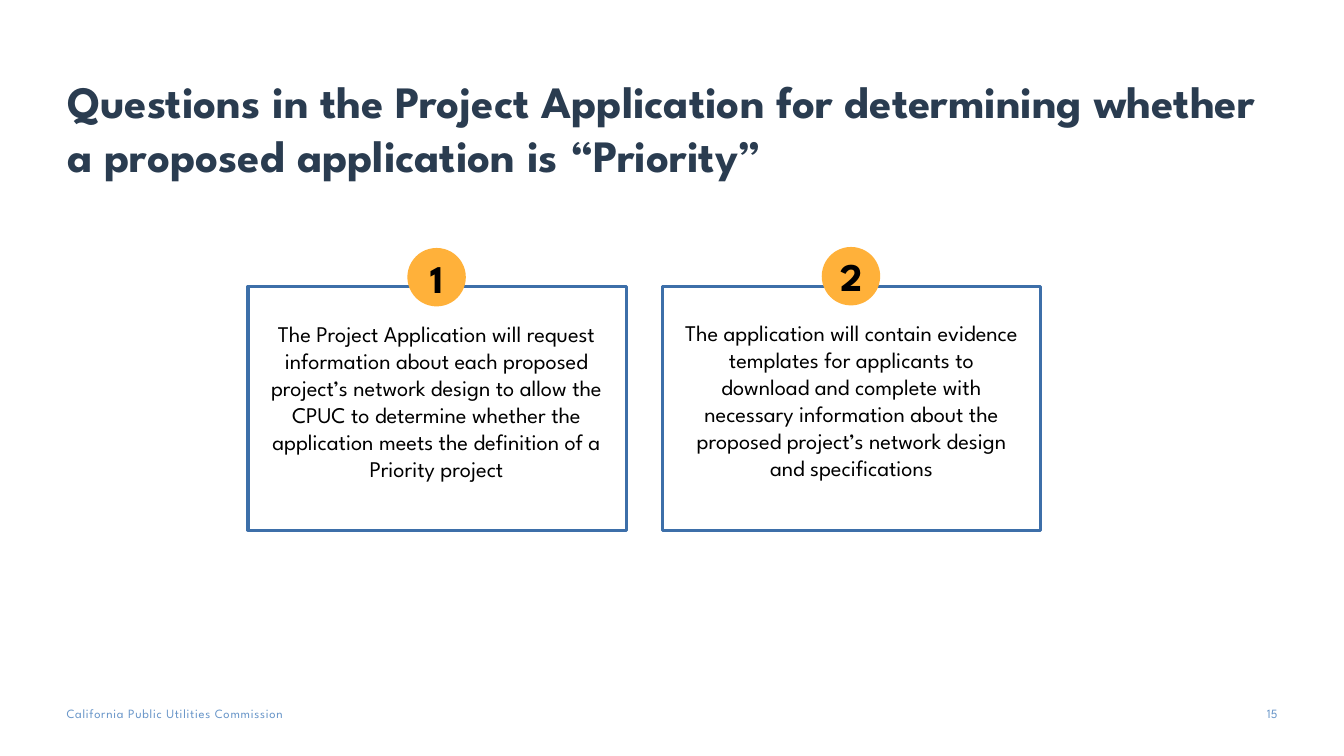
import pptx
import pptx.util
import pptx.dml.color
import pptx.enum.shapes
import pptx.enum.text

RGBColor = pptx.dml.color.RGBColor
SHAPE = pptx.enum.shapes.MSO_SHAPE
ALIGN = pptx.enum.text.PP_ALIGN
ANCHOR = pptx.enum.text.MSO_ANCHOR
FIT = pptx.enum.text.MSO_AUTO_SIZE

NAVY = RGBColor(0x2A, 0x3C, 0x50)
BLUE = RGBColor(0x3D, 0x6F, 0xA9)
SKY = RGBColor(0x69, 0x96, 0xC9)
AMBER = RGBColor(0xFF, 0xB1, 0x3A)
BLACK = RGBColor(0, 0, 0)
FONT = "League Spartan"
SCALE = 9144  # EMU in one px, 100 px to the inch

TITLE = ("Questions in the Project Application for determining whether "
         "a proposed application is “Priority”")

# Card left, badge top, number top, text frame, text
CARDS = [
    (246, 246, 247, (255, 313, 356, 199),
     "The Project Application will request information about each proposed "
     "project’s network design to allow the CPUC to determine whether the "
     "application meets the definition of a Priority project"),
    (657, 245, 245, (669, 312, 351, 199),
     "The application will contain evidence templates for applicants to "
     "download and complete with necessary information about the proposed "
     "project’s network design and specifications"),
]


def px(num):
    return pptx.util.Emu(num * SCALE)


def write(shape, text, size, color, align, bold=False, pads=(10, 5, 10, 5),
          anchor=ANCHOR.TOP, space=None):
    frame = shape.text_frame
    frame.text = text
    frame.word_wrap = True
    frame.auto_size = FIT.NONE
    frame.vertical_anchor = anchor
    (frame.margin_left, frame.margin_top,
     frame.margin_right, frame.margin_bottom) = map(px, pads)
    para = frame.paragraphs[0]
    para.alignment = align
    run = para.runs[0]
    run.font.name = FONT
    run.font.size = pptx.util.Pt(size)
    run.font.bold = bold
    run.font.color.rgb = color
    if space:
        run.font._element.set("spc", str(space))


def label(slide, box, *args, **opts):
    write(slide.shapes.add_textbox(*map(px, box)), *args, **opts)


def outline(slide, box):
    rect = slide.shapes.add_shape(SHAPE.RECTANGLE, *map(px, box))
    rect.shadow.inherit = False
    rect.fill.background()
    rect.line.color.rgb = BLUE
    rect.line.width = pptx.util.Pt(2.25)


def badge(slide, left, top):
    disc = slide.shapes.add_shape(SHAPE.OVAL, px(left), px(top), px(58), px(58))
    disc.shadow.inherit = False
    disc.fill.solid()
    disc.fill.fore_color.rgb = AMBER
    disc.line.fill.background()


def heading(slide):
    title = slide.shapes.title
    title.left, title.top, title.width, title.height = map(px, (67, 40, 1200, 145))
    write(title, TITLE, 32, NAVY, ALIGN.LEFT, bold=True,
          pads=(0, 5, 10, 5), anchor=ANCHOR.BOTTOM)


def card(slide, num, left, top, high, box, text):
    outline(slide, (left, 284, 375, 242))
    badge(slide, left + 158, top)
    label(slide, (left + 164, high, 47, 58), str(num), 28, BLACK, ALIGN.CENTER,
          bold=True, pads=(6, 6, 6, 6), anchor=ANCHOR.MIDDLE)
    label(slide, box, text, 16, BLACK, ALIGN.CENTER)


def footer(slide):
    none = (0, 0, 0, 0)
    label(slide, (66, 700, 321, 15), "California Public Utilities Commission",
          9, SKY, ALIGN.LEFT, pads=none, space=50)
    label(slide, (1225, 700, 42, 20), "15", 9, SKY, ALIGN.RIGHT, pads=none)


def main():
    deck = pptx.Presentation()
    deck.slide_width, deck.slide_height = px(1333), px(750)
    slide = deck.slides.add_slide(deck.slide_layouts[5])  # title only

    heading(slide)
    for num, parts in enumerate(CARDS, 1):
        card(slide, num, *parts)
    footer(slide)

    deck.save("out.pptx")


if __name__ == "__main__":
    main()
